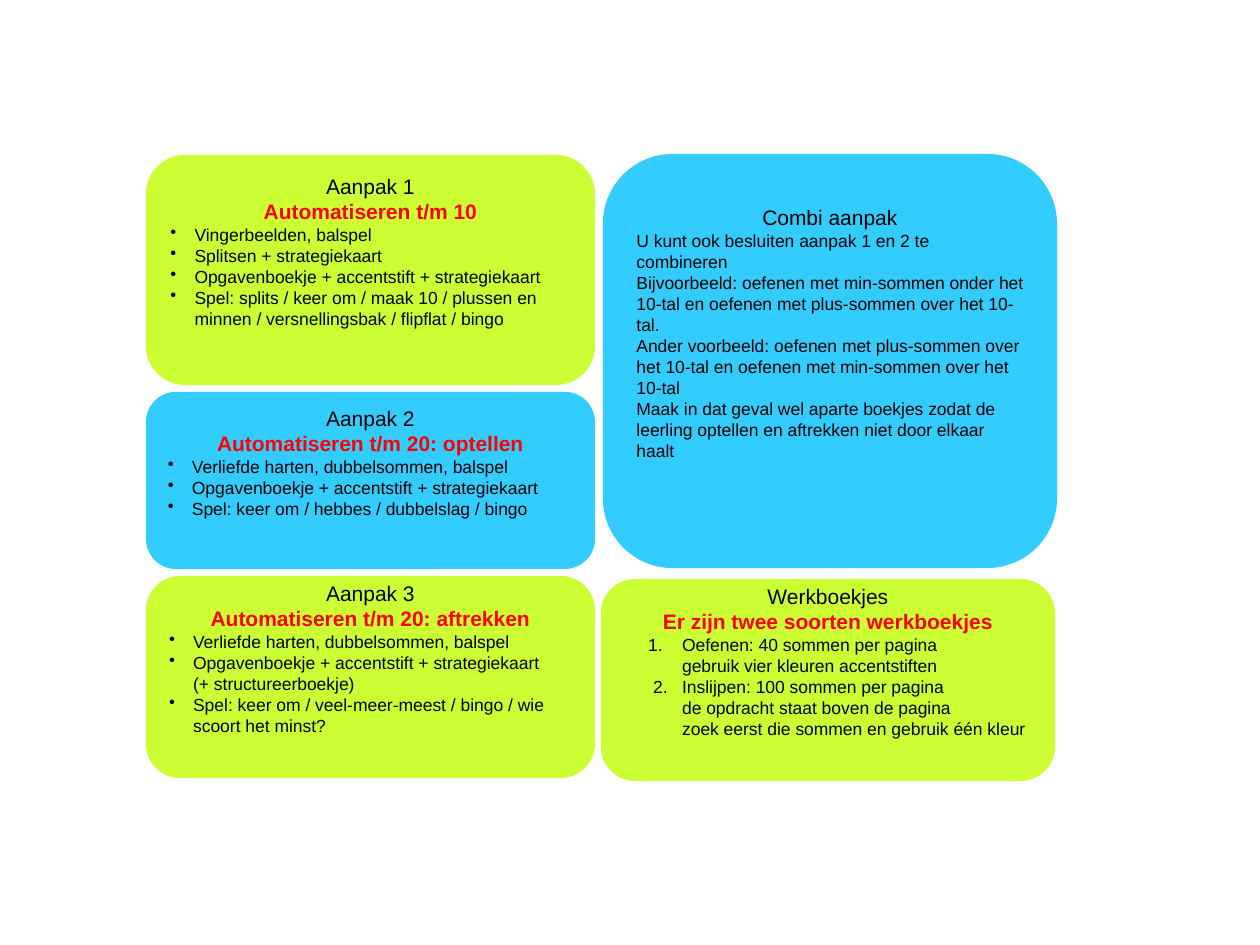
"""Build a slide with five panels that describe arithmetic practice approaches."""

from dataclasses import dataclass
from typing import Optional

from lxml.etree import SubElement
from pptx import Presentation
from pptx.dml.color import RGBColor
from pptx.enum.shapes import MSO_SHAPE
from pptx.enum.text import MSO_ANCHOR, PP_ALIGN
from pptx.oxml.ns import qn
from pptx.util import Emu, Pt

EMU_PER_PX = 914400 / 126
LIME = RGBColor(0xCC, 0xFF, 0x33)
SKY = RGBColor(0x33, 0xCC, 0xFF)
RED = RGBColor(0xFF, 0x00, 0x00)
BLACK = RGBColor(0x00, 0x00, 0x00)
WHITE = RGBColor(0xFF, 0xFF, 0xFF)
FONT = "Arial"
LEFT_X, LEFT_WIDTH, RIGHT_WIDTH = 147, 447, 452


@dataclass(frozen=True)
class Line:
    text: str
    size: int = 10
    color: RGBColor = BLACK
    bold: bool = False
    centered: bool = False
    margin: int = 0
    hanging: int = 0
    number: Optional[int] = None


@dataclass(frozen=True)
class Panel:
    left: int
    top: int
    width: int
    height: int
    color: RGBColor
    lines: list[Line]
    bottom_inset: int = 43


def px(length: int) -> Emu:
    return Emu(round(length * EMU_PER_PX))


def title(text: str) -> Line:
    return Line(text, size=12, centered=True)


def subtitle(text: str) -> Line:
    return Line(text, size=12, color=RED, bold=True, centered=True)


def bullets(*texts: str) -> list[Line]:
    return [Line(text, margin=24, hanging=24) for text in texts]


def numbered(number: int, hanging: int, first: str, *rest: str) -> list[Line]:
    return [Line(first, margin=58, hanging=hanging, number=number)] + [
        Line(text, margin=58) for text in rest
    ]


PANELS = [
    Panel(LEFT_X, 393, LEFT_WIDTH, 175, SKY, [
        title("Aanpak 2"),
        subtitle("Automatiseren t/m 20: optellen"),
        *bullets(
            "Verliefde harten, dubbelsommen, balspel",
            "Opgavenboekje + accentstift + strategiekaart",
            "Spel: keer om / hebbes / dubbelslag / bingo",
        ),
    ]),
    Panel(LEFT_X, 156, LEFT_WIDTH, 228, LIME, [
        title("Aanpak 1"),
        subtitle("Automatiseren t/m 10"),
        *bullets(
            "Vingerbeelden, balspel",
            "Splitsen + strategiekaart",
            "Opgavenboekje + accentstift + strategiekaart",
            "Spel: splits / keer om / maak 10 / plussen en minnen / "
            "versnellingsbak / flipflat / bingo",
        ),
    ]),
    Panel(LEFT_X, 577, LEFT_WIDTH, 200, LIME, [
        title("Aanpak 3"),
        subtitle("Automatiseren t/m 20: aftrekken"),
        *bullets(
            "Verliefde harten, dubbelsommen, balspel",
            "Opgavenboekje + accentstift + strategiekaart\v(+ structureerboekje)",
            "Spel: keer om / veel-meer-meest / bingo / wie scoort het minst?",
        ),
    ]),
    Panel(604, 155, RIGHT_WIDTH, 412, SKY, [
        title("Combi aanpak"),
        Line("U kunt ook besluiten aanpak 1 en 2 te combineren"),
        Line("Bijvoorbeeld: oefenen met min-sommen onder het 10-tal "
             "en oefenen met plus-sommen over het 10-tal."),
        Line("Ander voorbeeld: oefenen met plus-sommen over het 10-tal "
             "en oefenen met min-sommen over het 10-tal"),
        Line("Maak in dat geval wel aparte boekjes zodat de leerling "
             "optellen en aftrekken niet door elkaar haalt"),
    ], bottom_inset=63),
    Panel(602, 580, RIGHT_WIDTH, 200, LIME, [
        title("Werkboekjes"),
        subtitle("Er zijn twee soorten werkboekjes"),
        *numbered(
            1, 34,
            "Oefenen: 40 sommen per pagina",
            "gebruik vier kleuren accentstiften",
        ),
        *numbered(
            2, 29,
            "Inslijpen: 100 sommen per pagina",
            "de opdracht staat boven de pagina",
            "zoek eerst die sommen en gebruik één kleur",
        ),
    ]),
]


def write_line(para, line: Line) -> None:
    para.text = line.text
    para.alignment = PP_ALIGN.CENTER if line.centered else PP_ALIGN.LEFT
    properties = para._p.get_or_add_pPr()
    properties.set("marL", str(px(line.margin)))
    properties.set("indent", str(-px(line.hanging)))
    if line.number is not None:
        SubElement(properties, qn("a:buAutoNum"), type="arabicPeriod",
                   startAt=str(line.number))
    elif line.hanging:
        SubElement(properties, qn("a:buChar"), char="•")
    else:
        SubElement(properties, qn("a:buNone"))
    font = para.font
    font.name, font.size, font.bold = FONT, Pt(line.size), line.bold
    font.color.rgb = line.color


def draw_panel(page, panel: Panel) -> None:
    box = page.shapes.add_shape(
        MSO_SHAPE.ROUNDED_RECTANGLE,
        px(panel.left), px(panel.top), px(panel.width), px(panel.height),
    )
    box.shadow.inherit = False
    box.fill.solid()
    box.fill.fore_color.rgb = panel.color
    box.line.color.rgb = panel.color
    box.line.width = Pt(1.25)
    frame = box.text_frame
    frame.word_wrap = True
    frame.vertical_anchor = MSO_ANCHOR.MIDDLE
    frame.margin_bottom = px(panel.bottom_inset)
    for index, line in enumerate(panel.lines):
        para = frame.add_paragraph() if index else frame.paragraphs[0]
        write_line(para, line)


def main() -> None:
    deck = Presentation()
    deck.slide_width, deck.slide_height = px(1260), px(945)
    page = deck.slides.add_slide(deck.slide_layouts[6])
    page.background.fill.solid()
    page.background.fill.fore_color.rgb = WHITE
    for panel in PANELS:
        draw_panel(page, panel)
    deck.save("out.pptx")


if __name__ == "__main__":
    main()
